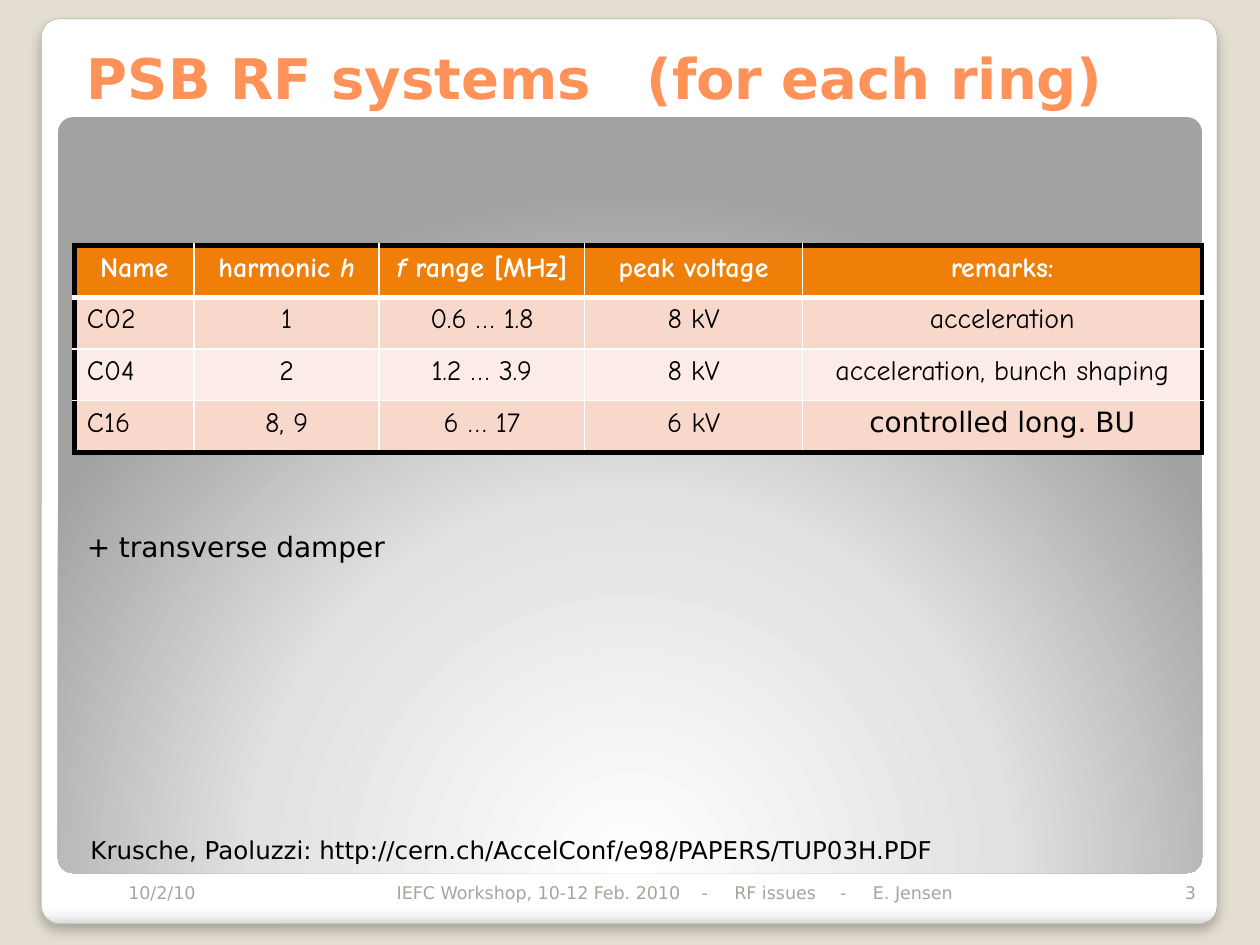
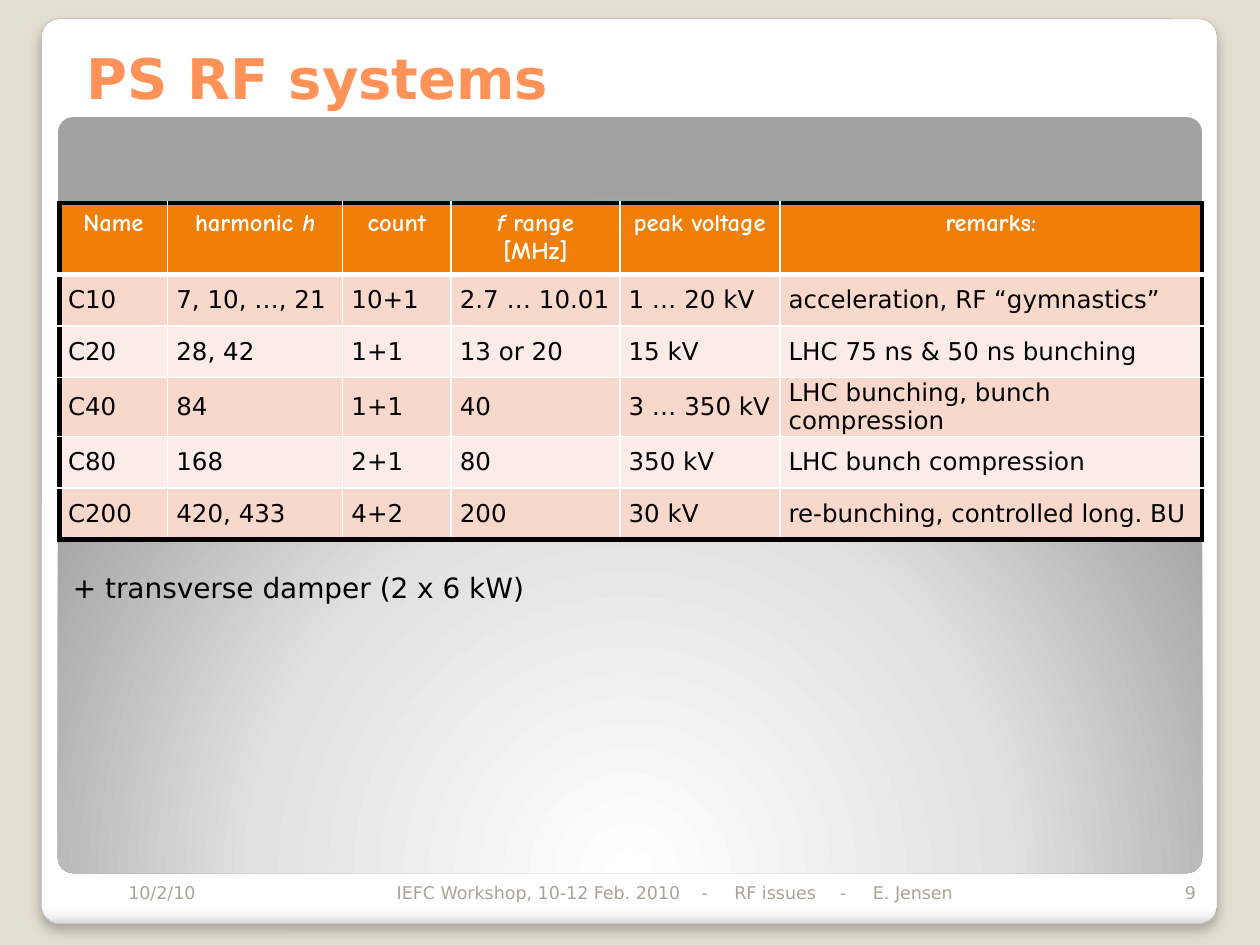
"""Build two slides that list the RF systems of the PSB and PS rings."""
from pptx import Presentation
from pptx.dml.color import RGBColor
from pptx.enum.shapes import MSO_SHAPE
from pptx.enum.text import MSO_ANCHOR, MSO_AUTO_SIZE, PP_ALIGN
from pptx.oxml import parse_xml
from pptx.oxml.ns import nsdecls, qn
from pptx.util import Inches, Pt

ROUND = MSO_SHAPE.ROUNDED_RECTANGLE
TOP, MID, LOW = MSO_ANCHOR.TOP, MSO_ANCHOR.MIDDLE, MSO_ANCHOR.BOTTOM
LEFT, CENTER, RIGHT = PP_ALIGN.LEFT, PP_ALIGN.CENTER, PP_ALIGN.RIGHT
NO_FIT = MSO_AUTO_SIZE.NONE

THEME = {
    "page": "E3DED1", "edge": "A4A4A4", "title": "FF9258", "foot": "A8A49B",
    "head": "F07F09", "bands": ("F9D8CC", "FCECE7"),
    "ink": "000000", "white": "FFFFFF",
    "sans": "DejaVu Sans", "hand": "Comic Neue",
    "title_size": 32, "note_size": 16, "cite_size": 14, "foot_size": 10,
}
CARD = [(0, "FFFFFF"), (98, "FFFFFF"), (99, "F7F7F7"), (100, "DADADA")]
PANEL = [(0, "FFFFFF"), (55, "E1E1E1"), (100, "A2A2A2")]
CARD_DIR = '<a:lin ang="5400000" scaled="0"/>'
PANEL_DIR = ('<a:path path="circle"><a:fillToRect l="50000" t="175000" '
             'r="50000" b="-75000"/></a:path>')
SHADOW = ('<a:outerShdw blurRad="76200" dist="50800" dir="5400000" '
          'algn="t" rotWithShape="0"><a:srgbClr val="000000">'
          '<a:alpha val="25000"/></a:srgbClr></a:outerShdw>')

DATE = "10/2/10"
EVENT = "IEFC Workshop, 10-12 Feb. 2010\t-\tRF issues\t-\tE. Jensen"
EVENT_TABS = (2.42, 2.68, 3.52, 3.78)

SLIDES = [
    {
        "title": "PSB RF systems\t(for each ring)", "tabs": (4.44,), "page": "3",
        "at": (0.59, 1.95), "cols": (0.95, 1.47, 1.63, 1.73, 3.17),
        "rows": [
            ("Name", "harmonic *h*", "*f* range [MHz]", "peak voltage", "remarks:"),
            ("C02", "1", "0.6 … 1.8", "8 kV", "acceleration"),
            ("C04", "2", "1.2 … 3.9", "8 kV", "acceleration, bunch shaping"),
            ("C16", "8, 9", "6 … 17", "6 kV", "controlled long. BU"),
        ],
        "size": 16, "font": THEME["hand"], "align": CENTER, "anchor": TOP,
        "pad": (0.1, 0.05), "sans_cells": [(3, 4)],
        "notes": [
            ("Krusche, Paoluzzi: http://cern.ch/AccelConf/e98/PAPERS/TUP03H.PDF",
             (0.62, 6.58, 7.16, 0.34), THEME["cite_size"]),
            ("+ transverse damper", (0.59, 4.15, 2.59, 0.37), THEME["note_size"]),
        ],
    },
    {
        "title": "PS RF systems", "tabs": (), "page": "9",
        "at": (0.47, 1.61), "cols": (0.86, 1.39, 0.86, 1.34, 1.27, 3.35),
        "rows": [
            ("Name", "harmonic *h*", "count", "*f* range [MHz]", "peak voltage",
             "remarks:"),
            ("C10", "7, 10, …, 21", "10+1", "2.7 … 10.01", "1 … 20 kV",
             "acceleration, RF “gymnastics”"),
            ("C20", "28, 42", "1+1", "13 or 20", "15 kV",
             "LHC 75 ns & 50 ns bunching"),
            ("C40", "84", "1+1", "40", "3 … 350 kV",
             "LHC bunching, bunch compression"),
            ("C80", "168", "2+1", "80", "350 kV", "LHC bunch compression"),
            ("C200", "420, 433", "4+2", "200", "30 kV",
             "re-bunching, controlled long. BU"),
        ],
        "size": 14, "font": THEME["sans"], "align": LEFT, "anchor": MID,
        "pad": (0.07, 0), "sans_cells": [],
        "notes": [
            ("+ transverse damper (2 x 6 kW)", (0.48, 4.48, 3.89, 0.37),
             THEME["note_size"]),
        ],
    },
]
ROW_HIGH = 0.41


def rgb(code):
    """Turn a hex code into a colour."""
    return RGBColor.from_string(code)


def box(at):
    """Turn inches into lengths."""
    return [Inches(n) for n in at]


def write(frame, text, size, color=THEME["ink"], font=THEME["sans"],
          bold=False, align=LEFT, tabs=()):
    """Write one paragraph; parts between asterisks are italic."""
    para = frame.paragraphs[0]
    para.alignment = align
    for i, part in enumerate(text.split("*")):
        if part:
            run = para.add_run()
            run.text = part
            face = run.font
            face.name, face.size, face.bold = font, Pt(size), bold
            face.italic = i % 2 == 1
            face.color.rgb = rgb(color)
    if tabs:
        stops = "".join(f'<a:tab pos="{Inches(n)}" algn="l"/>' for n in tabs)
        para._p.get_or_add_pPr().append(
            parse_xml(f'<a:tabLst {nsdecls("a")}>{stops}</a:tabLst>'))


def label(slide, text, at, anchor=TOP, wrap=True, **style):
    """Add a text box."""
    frame = slide.shapes.add_textbox(*box(at)).text_frame
    frame.word_wrap, frame.vertical_anchor = wrap, anchor
    write(frame, text, **style)


def plate(slide, at, stops, flow):
    """Add a rounded plate with a gradient fill."""
    shape = slide.shapes.add_shape(ROUND, *box(at))
    shape.adjustments[0] = 0.02
    shape.shadow.inherit = False
    shape.line.fill.background()
    shape.fill.background()
    marks = "".join(f'<a:gs pos="{pos * 1000}"><a:srgbClr val="{code}"/></a:gs>'
                    for pos, code in stops)
    props = shape.element.spPr
    props.replace(props.find(qn("a:noFill")), parse_xml(
        f'<a:gradFill {nsdecls("a")} rotWithShape="1">'
        f'<a:gsLst>{marks}</a:gsLst>{flow}</a:gradFill>'))
    return shape


def frame_page(slide, data):
    """Add the background, plates, title and footer."""
    back = slide.background.fill
    back.solid()
    back.fore_color.rgb = rgb(THEME["page"])
    card = plate(slide, (0.33, 0.15, 9.33, 7.18), CARD, CARD_DIR)
    card.line.color.rgb = rgb(THEME["edge"])
    card.line.width = Pt(0.16)
    card.element.spPr.find(qn("a:effectLst")).append(
        parse_xml(SHADOW.replace("<a:outerShdw", f'<a:outerShdw {nsdecls("a")}', 1)))
    panel = plate(slide, (0.46, 0.93, 9.08, 6), PANEL, PANEL_DIR)

    title = slide.shapes.title
    panel.element.addnext(title.element)
    title.left, title.top, title.width, title.height = box((0.59, 0.36, 8.95, 0.57))
    frame = title.text_frame
    frame.auto_size, frame.vertical_anchor = NO_FIT, LOW
    write(frame, data["title"], THEME["title_size"], color=THEME["title"],
          bold=True, tabs=data["tabs"])

    for text, left, width, align, tabs in (
            (EVENT, 3.05, 5.06, LEFT, EVENT_TABS),
            (data["page"], 9.09, 0.5, RIGHT, ()),
            (DATE, 0.42, 1.23, RIGHT, ())):
        label(slide, text, (left, 6.98, width, 0.24), anchor=LOW, align=align,
              size=THEME["foot_size"], color=THEME["foot"], tabs=tabs)


def edge(cell, side, color, width):
    """Draw one border of a cell."""
    cell._tc.get_or_add_tcPr().append(parse_xml(
        f'<a:{side} {nsdecls("a")} w="{Pt(width)}"><a:solidFill>'
        f'<a:srgbClr val="{color}"/></a:solidFill></a:{side}>'))


def fill_cell(cell, data, row, col):
    """Format and write one table cell."""
    rows, head = data["rows"], row == 0
    last_row, last_col = row == len(rows) - 1, col == len(data["cols"]) - 1
    dark, thin, thick = (THEME["ink"], 3), (THEME["white"], 1), (THEME["white"], 3)
    edge(cell, "lnL", *(dark if col == 0 else thin))
    edge(cell, "lnR", *(dark if last_col else thin))
    edge(cell, "lnT", *(dark if head else thin))
    edge(cell, "lnB", *(dark if last_row else thick if head else thin))
    cell.fill.solid()
    cell.fill.fore_color.rgb = rgb(
        THEME["head"] if head else THEME["bands"][(row - 1) % 2])

    side, rim = box((0.1, 0.05) if head else data["pad"])
    cell.margin_left = cell.margin_right = side
    cell.margin_top = cell.margin_bottom = rim
    cell.vertical_anchor = TOP if head else data["anchor"]
    font = THEME["hand"] if head else data["font"]
    if (row, col) in data["sans_cells"]:
        font = THEME["sans"]
    align = CENTER if head else LEFT if col == 0 else data["align"]
    write(cell.text_frame, rows[row][col], data["size"], font=font, bold=head,
          align=align, color=THEME["white"] if head else THEME["ink"])


def add_grid(slide, data):
    """Add the table of RF systems."""
    rows, cols = data["rows"], data["cols"]
    at = (*data["at"], sum(cols), ROW_HIGH * len(rows))
    grid = slide.shapes.add_table(len(rows), len(cols), *box(at)).table
    grid.horz_banding = False
    for col, width in enumerate(cols):
        grid.columns[col].width = Inches(width)
    for row in range(len(rows)):
        grid.rows[row].height = Inches(ROW_HIGH)
        for col in range(len(cols)):
            fill_cell(grid.cell(row, col), data, row, col)


def main():
    """Build and save the slides."""
    deck = Presentation()
    deck.slide_width, deck.slide_height = Inches(10), Inches(7.5)
    for data in SLIDES:
        slide = deck.slides.add_slide(deck.slide_layouts[5])
        frame_page(slide, data)
        add_grid(slide, data)
        for text, at, size in data["notes"]:
            label(slide, text, at, wrap=False, size=size)
    deck.save("out.pptx")


if __name__ == "__main__":
    main()
